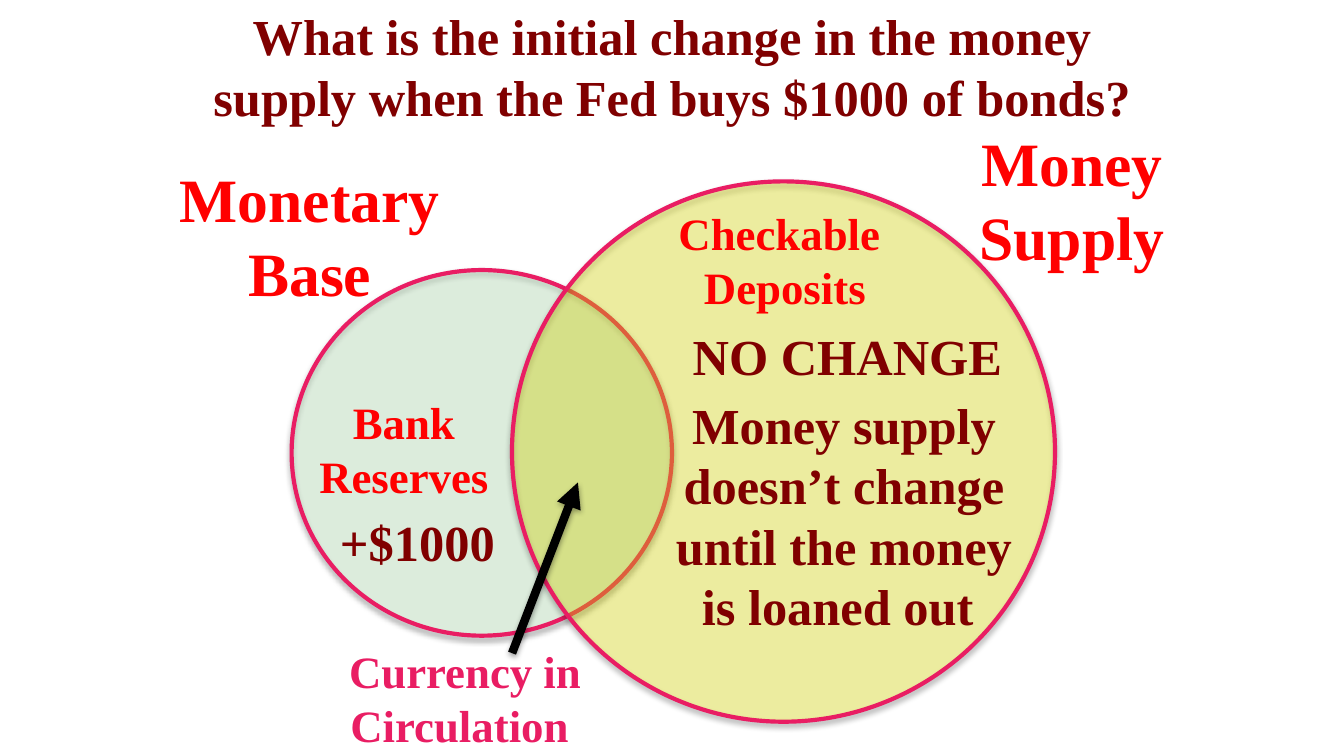
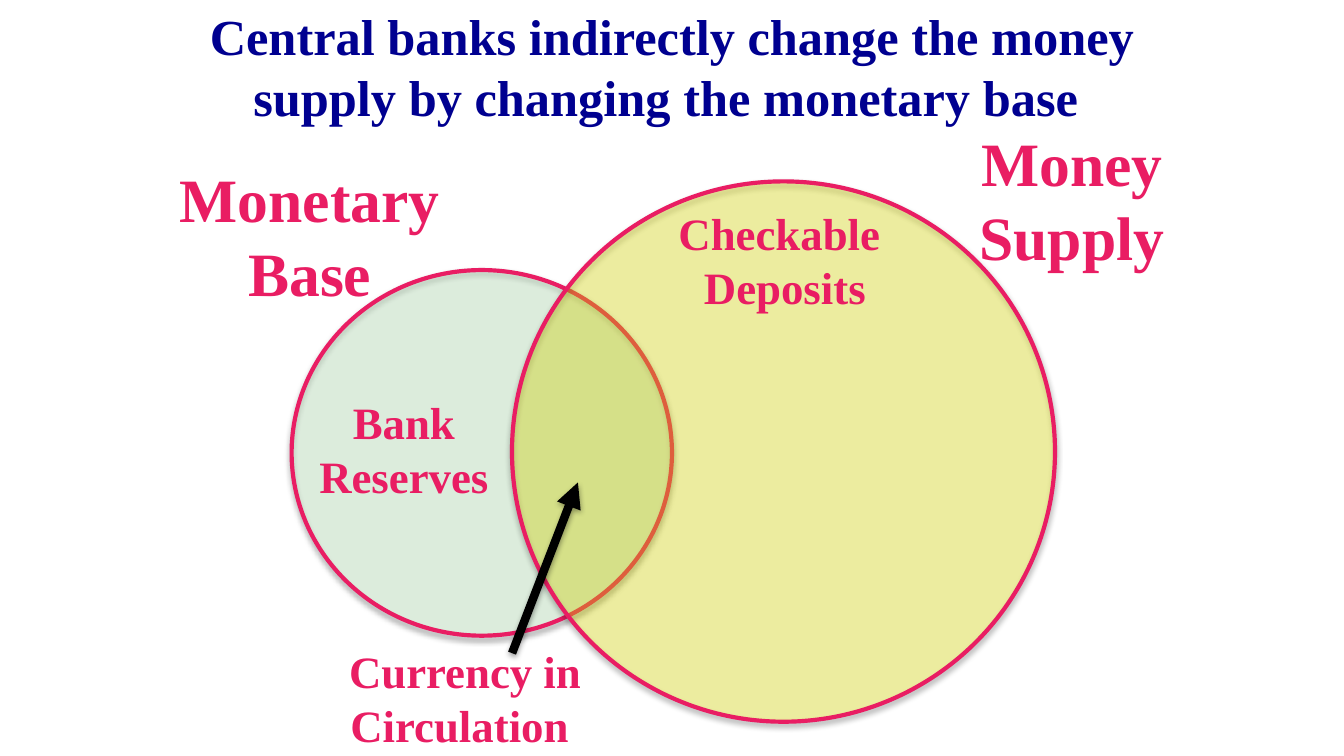
from dataclasses import dataclass

from lxml import etree
from pptx import Presentation
from pptx import util as u
from pptx.dml import color
from pptx.enum import shapes, text
from pptx.oxml import ns


@dataclass(frozen=True)
class Theme:
    font: str = "Times New Roman"
    maroon: str = "800000"
    navy: str = "000090"
    red: str = "FF0000"
    pink: str = "E91D63"
    black: str = "000000"
    mint: str = "CCFFCC"
    yellow: str = "FFFF00"
    heading: float = 33
    body: float = 27
    label: float = 24
    outline: float = 2.25
    arrow: float = 4.5
    fill_opacity: int = 30


@dataclass(frozen=True)
class Area:
    left: float
    top: float
    width: float
    height: float

    def lengths(self) -> tuple:
        return tuple(u.Inches(n) for n in (self.left, self.top, self.width, self.height))


@dataclass(frozen=True)
class Circle:
    area: Area
    fill: str


@dataclass(frozen=True)
class Label:
    lines: tuple[str, ...]
    area: Area
    size: float


@dataclass(frozen=True)
class Page:
    title: str
    title_color: str
    label_color: str
    answers: tuple[Label, ...] = ()


THEME = Theme()
TITLE_AREA = Area(1.29, 0, 7.42, 0.92)
CIRCLES = (
    Circle(Area(2.17, 2.01, 2.83, 2.72), THEME.mint),
    Circle(Area(3.81, 1.35, 4.04, 4.02), THEME.yellow),
)
LABELS = (
    Label(("Checkable ", "Deposits"), Area(4.99, 1.48, 1.7, 0.84), THEME.label),
    Label(("Bank", "Reserves"), Area(2.32, 2.89, 1.37, 0.84), THEME.label),
    Label(("Monetary", "Base"), Area(1.28, 1.15, 2.05, 1.11), THEME.heading),
    Label(("Money", "Supply"), Area(7.23, 0.88, 1.49, 1.11), THEME.heading),
)
CURRENCY = Label(("Currency in", "Circulation "), Area(2.54, 4.74, 1.84, 0.84), THEME.label)
ANSWERS = (
    Label(("+$1000",), Area(2.1, 3.76, 2.01, 0.49), THEME.body),
    Label(
        ("Money supply doesn’t change until the money is loaned out ",),
        Area(4.91, 2.89, 2.74, 1.78),
        THEME.body,
    ),
    Label(("NO CHANGE",), Area(4.91, 2.38, 2.79, 0.49), THEME.body),
)
PAGES = (
    Page(
        "What is the initial change in the money supply when the Fed buys $1000 of bonds?",
        THEME.maroon,
        THEME.red,
        ANSWERS,
    ),
    Page(
        "Central banks indirectly change the money supply by changing the monetary base ",
        THEME.navy,
        THEME.pink,
    ),
)


def rgb(value: str) -> color.RGBColor:
    return color.RGBColor.from_string(value)


def add_child(parent, tag: str, **attributes):
    values = {name: str(value) for name, value in attributes.items()}
    return etree.SubElement(parent, ns.qn(tag), values)


def add_shadow(shape, opacity: int, distance: float) -> None:
    effects = add_child(shape._element.spPr, "a:effectLst")
    shadow = add_child(
        effects,
        "a:outerShdw",
        blurRad=u.Pt(3),
        dist=u.Pt(distance),
        dir=90 * 60000,
        rotWithShape=0,
    )
    tint = add_child(shadow, "a:srgbClr", val=THEME.black)
    add_child(tint, "a:alpha", val=opacity * 1000)


def write_text(frame, *lines: str, size: float, ink: str, margin: float, wrap: bool) -> None:
    frame.word_wrap = wrap
    frame.auto_size = text.MSO_AUTO_SIZE.SHAPE_TO_FIT_TEXT
    frame.vertical_anchor = text.MSO_ANCHOR.TOP
    frame.margin_left = frame.margin_right = u.Inches(margin)
    frame.margin_top = frame.margin_bottom = u.Inches(margin)
    for index, line in enumerate(lines):
        para = frame.add_paragraph() if index else frame.paragraphs[0]
        para.alignment = text.PP_ALIGN.CENTER
        span = para.add_run()
        span.text = line
        span.font.name = THEME.font
        span.font.size = u.Pt(size)
        span.font.bold = True
        span.font.color.rgb = rgb(ink)


def add_title(slide, page: Page) -> None:
    box = slide.shapes.title
    box.left, box.top, box.width, box.height = TITLE_AREA.lengths()
    write_text(box.text_frame, page.title, size=THEME.body, ink=page.title_color,
               margin=0.04, wrap=True)


def add_label(slide, label: Label, ink: str, margin: float = 0.05, wrap: bool = False) -> None:
    box = slide.shapes.add_textbox(*label.area.lengths())
    write_text(box.text_frame, *label.lines, size=label.size, ink=ink,
               margin=margin, wrap=wrap)


def add_circle(slide, circle: Circle) -> None:
    shape = slide.shapes.add_shape(shapes.MSO_SHAPE.OVAL, *circle.area.lengths())
    shape.fill.solid()
    shape.fill.fore_color.rgb = rgb(circle.fill)
    fill = shape._element.spPr.find(ns.qn("a:solidFill"))
    add_child(fill[0], "a:alpha", val=THEME.fill_opacity * 1000)
    shape.line.color.rgb = rgb(THEME.pink)
    shape.line.width = u.Pt(THEME.outline)
    add_shadow(shape, opacity=35, distance=1.8)


def add_arrow(slide) -> None:
    ends = (u.Inches(n) for n in (3.81, 4.86, 4.3, 3.59))
    arrow = slide.shapes.add_connector(shapes.MSO_CONNECTOR.STRAIGHT, *ends)
    arrow.line.color.rgb = rgb(THEME.black)
    arrow.line.width = u.Pt(THEME.arrow)
    add_child(arrow.line._get_or_add_ln(), "a:tailEnd", type="triangle")
    add_shadow(arrow, opacity=38, distance=1.6)


def build_page(deck, page: Page) -> None:
    slide = deck.slides.add_slide(deck.slide_layouts[5])
    add_title(slide, page)
    for circle in CIRCLES:
        add_circle(slide, circle)
    for label in LABELS:
        add_label(slide, label, page.label_color)
    add_label(slide, CURRENCY, THEME.pink)
    add_arrow(slide)
    for answer in page.answers:
        add_label(slide, answer, THEME.maroon, margin=0.04, wrap=True)


def main() -> None:
    deck = Presentation()
    deck.slide_width = u.Inches(10)
    deck.slide_height = u.Inches(10 * 9 / 16)
    for page in PAGES:
        build_page(deck, page)
    deck.save("out.pptx")


if __name__ == "__main__":
    main()
